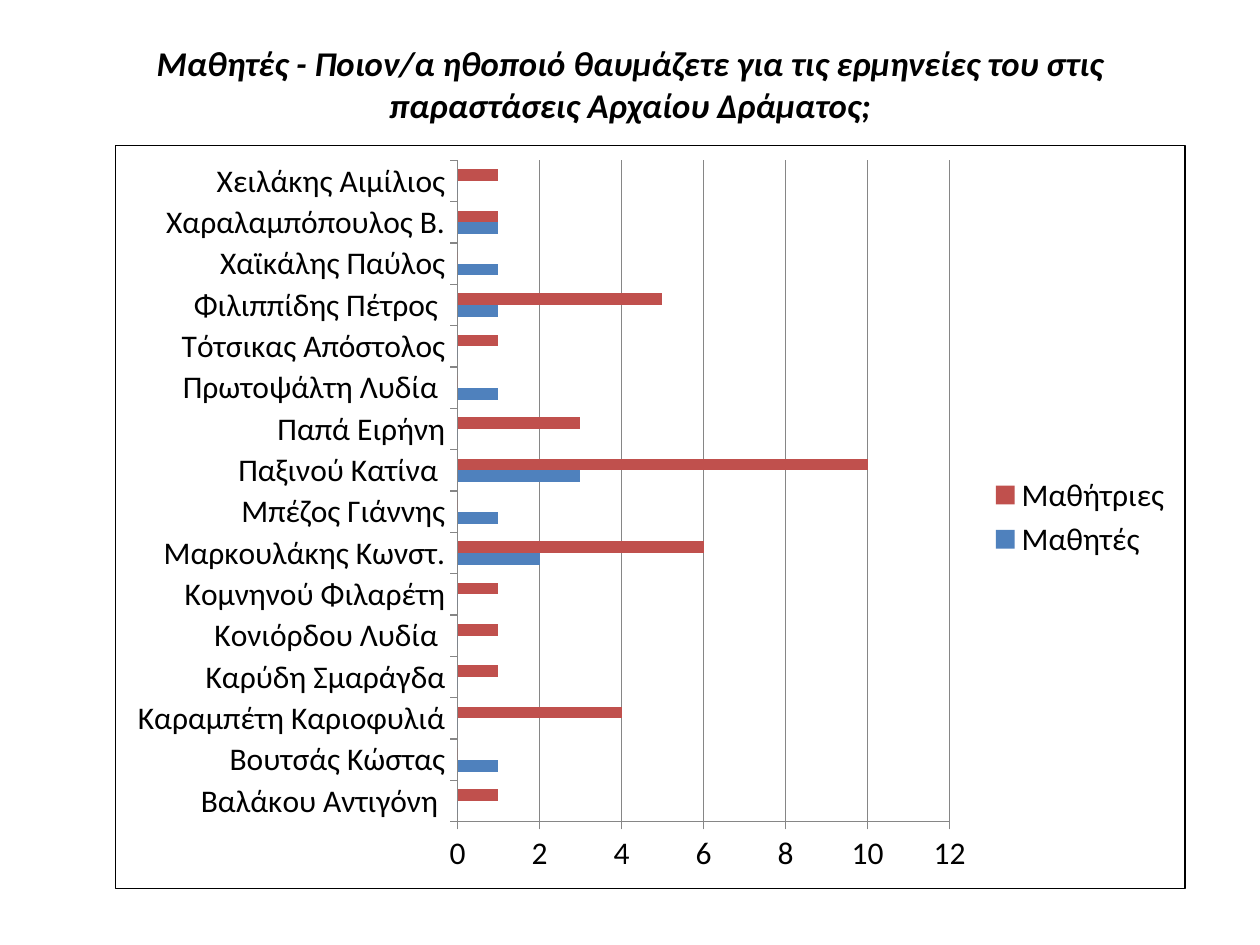
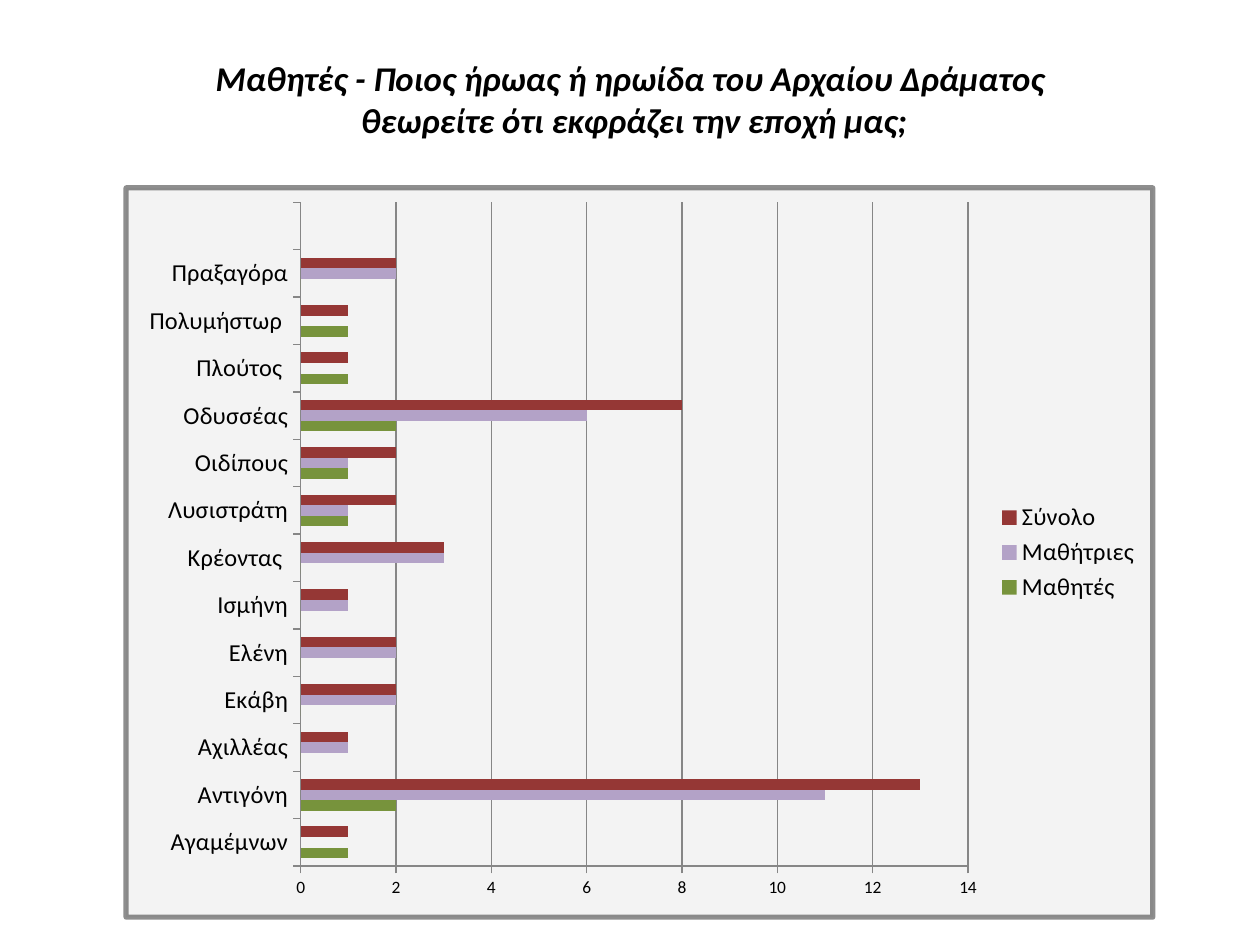
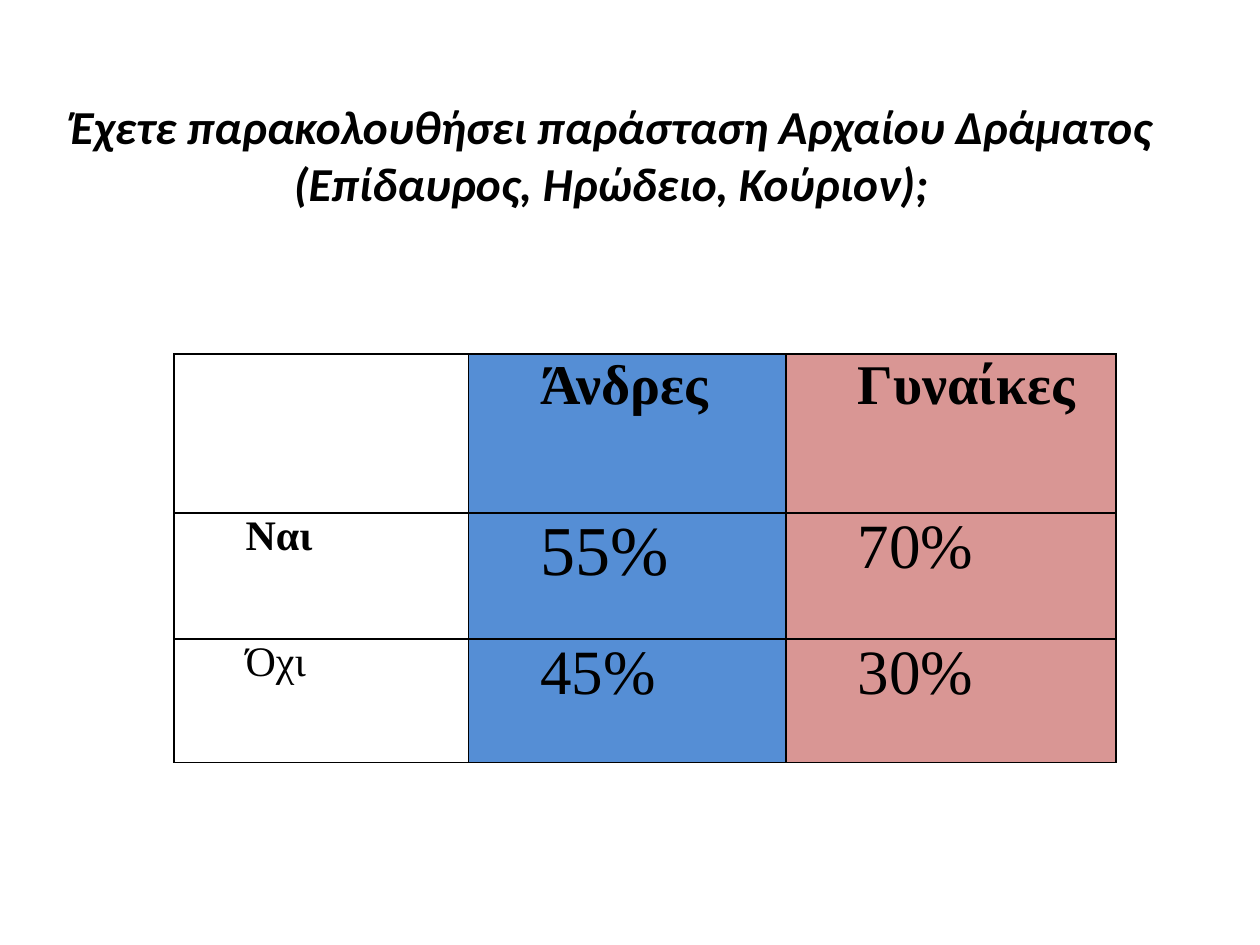
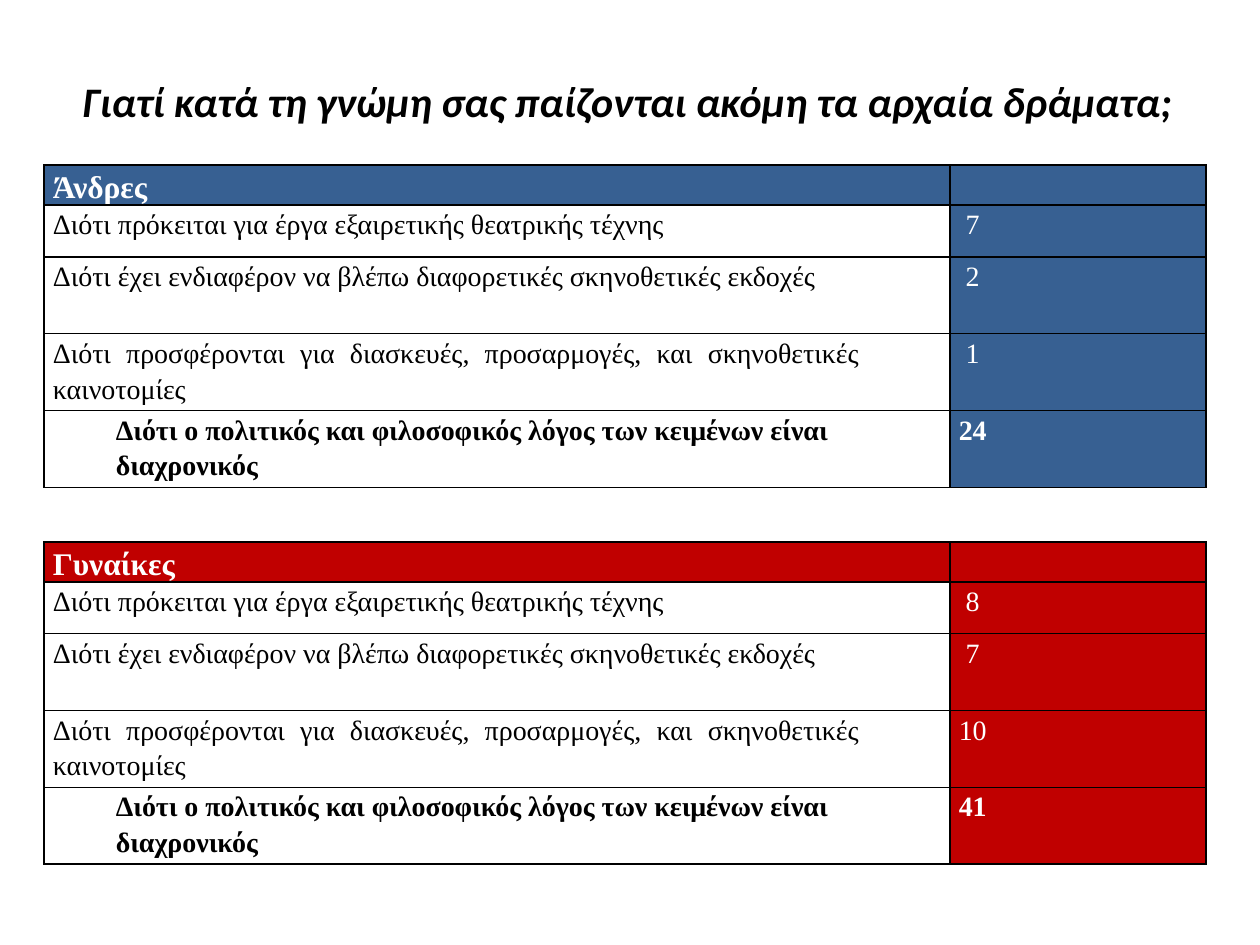
"""Build four slides of survey results about ancient drama."""
from dataclasses import dataclass

from lxml.etree import SubElement
from pptx import Presentation
from pptx.chart.chart import Chart
from pptx.chart.data import CategoryChartData
from pptx.dml.color import RGBColor
from pptx.enum.chart import XL_CHART_TYPE, XL_LEGEND_POSITION, XL_TICK_MARK
from pptx.enum.text import MSO_ANCHOR, MSO_AUTO_SIZE, PP_ALIGN
from pptx.oxml import parse_xml
from pptx.oxml.ns import nsdecls, qn
from pptx.presentation import Presentation as Deck
from pptx.slide import Slide
from pptx.table import _Cell
from pptx.util import Inches, Pt


@dataclass(frozen=True)
class Theme:
    """Colours, fonts and type sizes of the deck."""
    sans: str = "Calibri"
    serif: str = "Times New Roman"
    black: str = "000000"
    white: str = "FFFFFF"
    axis: str = "868686"
    panel: str = "F2F2F2"
    frame: str = "404040"
    blue: str = "4F81BD"
    red: str = "C0504D"
    green: str = "77933C"
    lilac: str = "B3A2C7"
    maroon: str = "953735"
    men_light: str = "558ED5"
    women_light: str = "D99694"
    men_dark: str = "376092"
    women_dark: str = "C00000"
    heading_size: float = 18
    reason_size: float = 16


THEME = Theme()


@dataclass(frozen=True)
class Box:
    """A place on the slide, in inches."""
    left: float
    top: float
    width: float
    height: float

    def lengths(self) -> tuple:
        """Give the four values as lengths."""
        return tuple(Inches(v) for v in (self.left, self.top, self.width, self.height))


@dataclass(frozen=True)
class Title:
    """A slide title with its size and place."""
    text: str
    size: float
    box: Box


@dataclass(frozen=True)
class BarSeries:
    """One named and coloured series of bars."""
    name: str
    color: str
    values: tuple


@dataclass(frozen=True)
class BarChart:
    """A bar chart with its frame and plot layout."""
    box: Box
    categories: tuple
    series: tuple
    size: float
    label_size: float
    plot: Box
    border: str
    border_width: float
    border_opacity: int = 100
    fill: str = ""
    fill_opacity: int = 100


@dataclass(frozen=True)
class CellText:
    """The content and format of one table cell."""
    text: str = ""
    size: float = 16
    bold: bool = False
    color: str = THEME.black
    fill: str = ""
    indent: float = 0
    align: PP_ALIGN | None = None
    line_spacing: float | None = None
    space_after: float = 0
    right_inset: float = 0.07


def solid_fill(color: str, opacity: int = 100) -> str:
    """Give the XML of a solid fill."""
    return (f'<a:solidFill><a:srgbClr val="{color}"><a:alpha val="{opacity * 1000}"/>'
            '</a:srgbClr></a:solidFill>')


def add_titled_slide(deck: Deck, title: Title) -> Slide:
    """Add a title-only slide and format its title."""
    slide = deck.slides.add_slide(deck.slide_layouts[5])
    holder = slide.shapes.title
    holder.left, holder.top, holder.width, holder.height = title.box.lengths()
    frame = holder.text_frame
    frame.text = title.text
    frame.word_wrap = True
    frame.auto_size = MSO_AUTO_SIZE.NONE
    frame.vertical_anchor = MSO_ANCHOR.MIDDLE
    para = frame.paragraphs[0]
    para.alignment = PP_ALIGN.CENTER
    for span in para.runs:
        span.font.name, span.font.size = THEME.sans, Pt(title.size)
        span.font.bold = span.font.italic = True
        span.font.color.rgb = RGBColor.from_string(THEME.black)
    return slide


def frame_chart(chart: Chart, design: BarChart) -> None:
    """Set the chart area's fill and border and the plot's layout."""
    fill = solid_fill(design.fill, design.fill_opacity) if design.fill else "<a:noFill/>"
    border = solid_fill(design.border, design.border_opacity)
    area = parse_xml(f'<c:spPr {nsdecls("c", "a")}>{fill}'
                     f'<a:ln w="{Pt(design.border_width)}">{border}</a:ln></c:spPr>')
    body = chart.element.find(qn("c:chart"))
    body.addnext(area)
    plot_area = body.find(qn("c:plotArea"))
    for old in plot_area.findall(qn("c:layout")):
        plot_area.remove(old)
    layout = parse_xml(f'<c:layout {nsdecls("c")}><c:manualLayout/></c:layout>')
    plot = design.plot
    settings = {"layoutTarget": "inner", "xMode": "edge", "yMode": "edge",
                "x": plot.left, "y": plot.top, "w": plot.width, "h": plot.height}
    for tag, value in settings.items():
        SubElement(layout[0], qn(f"c:{tag}")).set("val", str(value))
    plot_area.insert(0, layout)


def add_bar_chart(slide: Slide, design: BarChart) -> None:
    """Draw a clustered bar chart."""
    data = CategoryChartData()
    data.categories = design.categories
    for series in design.series:
        data.add_series(series.name, series.values)
    chart = slide.shapes.add_chart(
        XL_CHART_TYPE.BAR_CLUSTERED, *design.box.lengths(), data).chart
    chart.has_title = False
    chart.font.name, chart.font.size = THEME.sans, Pt(design.size)
    chart.font.color.rgb = RGBColor.from_string(THEME.black)
    chart.has_legend = True
    chart.legend.position = XL_LEGEND_POSITION.RIGHT
    chart.legend.include_in_layout = False
    chart.legend.font.size = Pt(design.label_size)
    chart.category_axis.tick_labels.font.size = Pt(design.label_size)
    chart.value_axis.has_major_gridlines = True
    lines = [chart.value_axis.major_gridlines.format.line]
    for axis in (chart.category_axis, chart.value_axis):
        axis.major_tick_mark = XL_TICK_MARK.OUTSIDE
        lines.append(axis.format.line)
    for line in lines:
        line.color.rgb = RGBColor.from_string(THEME.axis)
        line.width = Pt(0.75)
    bars = chart.plots[0]
    bars.gap_width, bars.overlap, bars.vary_by_categories = 150, 0, False
    for drawn, series in zip(bars.series, design.series):
        drawn.format.fill.solid()
        drawn.format.fill.fore_color.rgb = RGBColor.from_string(series.color)
    frame_chart(chart, design)


def fill_cell(cell: _Cell, content: CellText) -> None:
    """Write and format one cell with a thin black border."""
    cell.margin_left, cell.margin_right = Inches(0.07), Inches(content.right_inset)
    cell.margin_top = cell.margin_bottom = 0
    properties = cell._tc.get_or_add_tcPr()
    for side in ("lnL", "lnR", "lnT", "lnB"):
        properties.append(parse_xml(
            f'<a:{side} {nsdecls("a")} w="{Pt(1)}">{solid_fill(THEME.black)}</a:{side}>'))
    if content.fill:
        cell.fill.solid()
        cell.fill.fore_color.rgb = RGBColor.from_string(content.fill)
    else:
        cell.fill.background()
    if not content.text:
        return
    cell.text_frame.text = content.text
    para = cell.text_frame.paragraphs[0]
    para.alignment = content.align
    para.line_spacing = content.line_spacing
    if content.space_after:
        para.space_after = Pt(content.space_after)
    if content.indent:
        layout = para._p.get_or_add_pPr()
        layout.set("marL", str(Inches(content.indent)))
        layout.set("indent", "0")
    font = para.runs[0].font
    font.name, font.size, font.bold = THEME.serif, Pt(content.size), content.bold
    font.color.rgb = RGBColor.from_string(content.color)


def add_grid(slide: Slide, left: float, top: float, widths: tuple, heights: tuple,
             rows: list) -> None:
    """Draw a table from rows of cell contents."""
    box = Box(left, top, sum(widths), sum(heights))
    table = slide.shapes.add_table(len(heights), len(widths), *box.lengths()).table
    table.first_row = table.horz_banding = False
    for column, width in zip(table.columns, widths):
        column.width = Inches(width)
    for row, height, contents in zip(table.rows, heights, rows):
        row.height = Inches(height)
        for cell, content in zip(row.cells, contents):
            fill_cell(cell, content)


def add_reasons(slide: Slide, top: float, heading: str, color: str, counts: tuple) -> None:
    """Draw one group's table of reasons and counts."""
    shared = {"align": PP_ALIGN.JUSTIFY, "line_spacing": 1.15}
    rows = [[CellText(heading, THEME.heading_size, True, THEME.white, color, **shared),
             CellText(fill=color)]]
    for number, (reason, count) in enumerate(zip(REASONS, counts), 1):
        last = number == len(REASONS)
        if last:
            text = CellText(reason, THEME.reason_size, True, indent=0.5,
                            line_spacing=1.15, space_after=10)
        else:
            text = CellText(reason, THEME.reason_size, right_inset=0.72, **shared)
        rows.append([text, CellText(count, THEME.reason_size, last, THEME.white,
                                    color, **shared)])
    add_grid(slide, 0.35, top, (7.19, 2.03), (0.31, 0.41, 0.61, 0.61, 0.61), rows)


REASONS = (
    "Διότι πρόκειται για έργα εξαιρετικής θεατρικής τέχνης",
    "Διότι έχει ενδιαφέρον να βλέπω διαφορετικές σκηνοθετικές εκδοχές",
    "Διότι προσφέρονται για διασκευές, προσαρμογές, και σκηνοθετικές καινοτομίες",
    "Διότι ο πολιτικός και φιλοσοφικός λόγος των κειμένων είναι διαχρονικός",
)

ACTORS = BarChart(
    box=Box(0.91, 1.15, 8.5, 5.91),
    categories=(
        "Βαλάκου Αντιγόνη ", "Βουτσάς Κώστας", "Καραμπέτη Καριοφυλιά", "Καρύδη Σμαράγδα",
        "Κονιόρδου Λυδία ", "Κομνηνού Φιλαρέτη", "Μαρκουλάκης Κωνστ.", "Μπέζος Γιάννης",
        "Παξινού Κατίνα ", "Παπά Ειρήνη", "Πρωτοψάλτη Λυδία ", "Τότσικας Απόστολος",
        "Φιλιππίδης Πέτρος ", "Χαϊκάλης Παύλος", "Χαραλαμπόπουλος Β.", "Χειλάκης Αιμίλιος"),
    series=(
        BarSeries("Μαθητές", THEME.blue, (0, 1, 0, 0, 0, 0, 2, 1, 3, 0, 1, 0, 1, 1, 1, 0)),
        BarSeries("Μαθήτριες", THEME.red, (1, 0, 4, 1, 1, 1, 6, 0, 10, 3, 0, 1, 5, 0, 1, 1))),
    size=18, label_size=18, plot=Box(0.32, 0.02, 0.46, 0.89),
    border=THEME.black, border_width=0.75)

HEROES = BarChart(
    box=Box(0.98, 1.47, 8.19, 5.83),
    categories=(
        "Αγαμέμνων", "Αντιγόνη", "Αχιλλέας", "Εκάβη", "Ελένη", "Ισμήνη", "Κρέοντας ",
        "Λυσιστράτη", "Οιδίπους", "Οδυσσέας", "Πλούτος ", "Πολυμήστωρ ", "Πραξαγόρα", ""),
    series=(
        BarSeries("Μαθητές", THEME.green, (1, 2, 0, 0, 0, 0, 0, 1, 1, 2, 1, 1, 0, None)),
        BarSeries("Μαθήτριες", THEME.lilac, (0, 11, 1, 2, 2, 1, 3, 1, 1, 6, 0, 0, 2, None)),
        BarSeries("Σύνολο", THEME.maroon, (1, 13, 1, 2, 2, 1, 3, 2, 2, 8, 1, 1, 2, None))),
    size=10, label_size=14, plot=Box(0.17, 0.02, 0.65, 0.91),
    border=THEME.frame, border_width=3, border_opacity=58,
    fill=THEME.panel, fill_opacity=88)

ATTENDANCE = (
    (("", 24, False), ("Άνδρες", 32, True), ("Γυναίκες", 32, True)),
    (("Ναι", 24, True), ("55%", 40, False), ("70%", 36, False)),
    (("Όχι", 24, False), ("45%", 36, False), ("30%", 36, False)),
)


def main() -> None:
    """Build and save the deck."""
    deck = Presentation()
    deck.slide_width, deck.slide_height = Inches(10), Inches(7.5)

    actors = add_titled_slide(deck, Title(
        "Μαθητές - Ποιον/α ηθοποιό θαυμάζετε για τις ερμηνείες του στις "
        "παραστάσεις Αρχαίου Δράματος;", 19.8, Box(0.5, 0.32, 9, 0.69)))
    add_bar_chart(actors, ACTORS)

    heroes = add_titled_slide(deck, Title(
        "Μαθητές - Ποιος ήρωας ή ηρωίδα του Αρχαίου Δράματος\v"
        " θεωρείτε ότι εκφράζει την εποχή μας;", 19.8, Box(0.5, 0.32, 9, 0.93)))
    add_bar_chart(heroes, HEROES)

    attendance = add_titled_slide(deck, Title(
        "Έχετε παρακολουθήσει παράσταση Αρχαίου Δράματος "
        "(Επίδαυρος, Ηρώδειο, Κούριον);", 27, Box(0.35, 0.44, 9, 1.56)))
    fills = ("", THEME.men_light, THEME.women_light)
    rows = [[CellText(text, size, bold, fill=fill, indent=0.5)
             for (text, size, bold), fill in zip(row, fills)] for row in ATTENDANCE]
    add_grid(attendance, 1.38, 2.81, (2.34, 2.52, 2.62), (1.26, 1, 0.98), rows)

    reasons = add_titled_slide(deck, Title(
        "Γιατί κατά τη γνώμη σας παίζονται ακόμη τα αρχαία δράματα;", 24,
        Box(0.48, 0.21, 9, 1.18)))
    add_reasons(reasons, 1.31, "Άνδρες", THEME.men_dark, (" 7", " 2", " 1", "24"))
    add_reasons(reasons, 4.3, "Γυναίκες", THEME.women_dark, (" 8", " 7", "10", "41"))

    deck.save("out.pptx")


if __name__ == "__main__":
    main()
